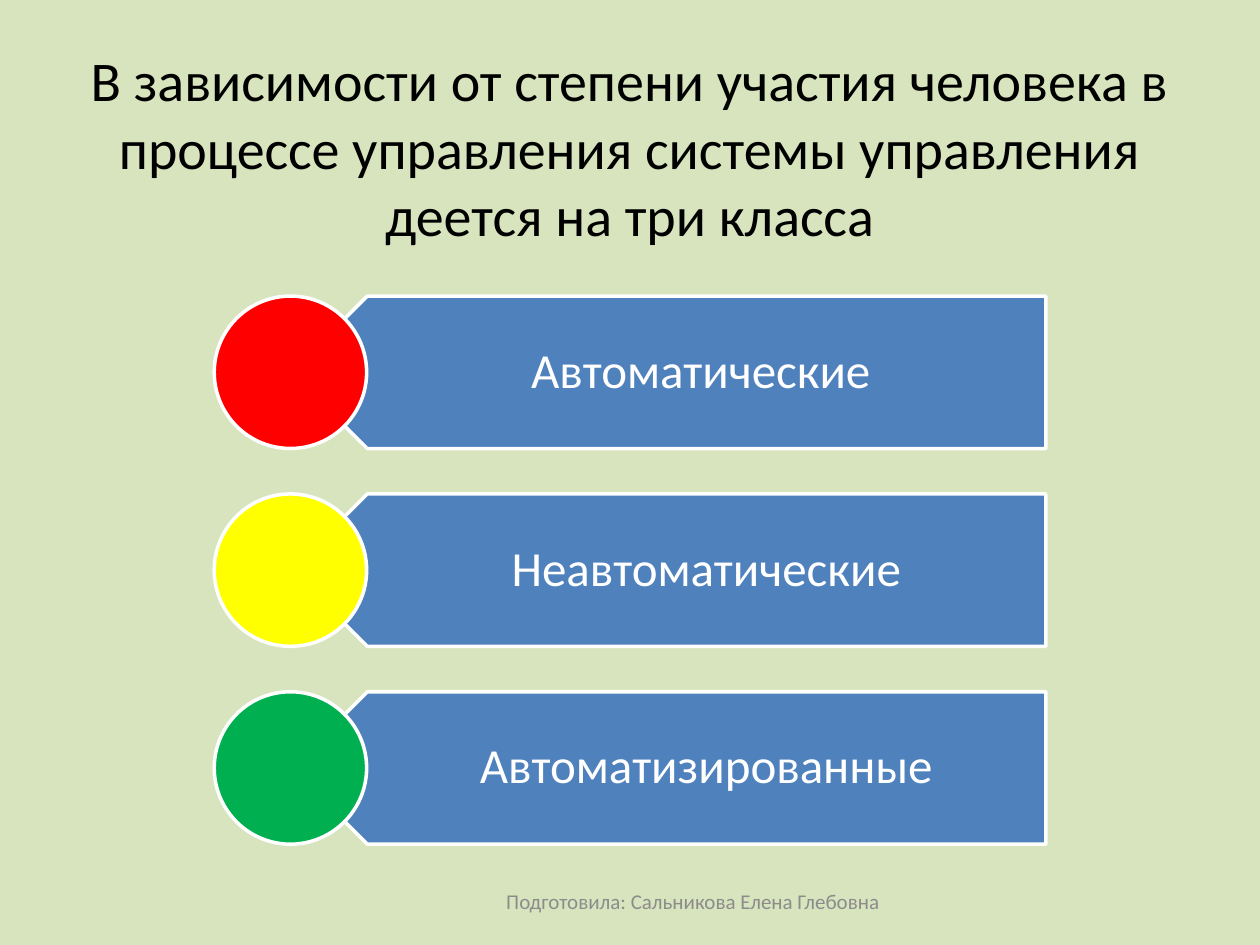
from dataclasses import dataclass

from pptx import Presentation
from pptx.dml.color import RGBColor
from pptx.enum.shapes import MSO_SHAPE
from pptx.enum.text import MSO_ANCHOR, PP_ALIGN
from pptx.util import Inches, Pt

PLATE = MSO_SHAPE.PENTAGON
OVAL = MSO_SHAPE.OVAL
MIDDLE = MSO_ANCHOR.MIDDLE
CENTER = PP_ALIGN.CENTER


@dataclass(frozen=True)
class Theme:
    font: str = "Calibri"
    back: str = "D7E4BD"
    ink: str = "000000"
    white: str = "FFFFFF"
    bar: str = "4F81BD"
    grey: str = "8C8C8C"
    title: int = 32
    label: int = 28
    foot: int = 12
    line: int = 2


THEME = Theme()
SYSTEMS = [
    ("Автоматические ", "FF0000"),
    ("Неавтоматические", "FFFF00"),
    ("Автоматизированные", "00B050"),
]
TOP, STEP, SIZE = 2.35, 1.57, 1.21


def write(frame, text, size, color, spacing=None):
    frame.word_wrap = True
    frame.vertical_anchor = MIDDLE
    para = frame.paragraphs[0]
    para.alignment = CENTER
    if spacing:
        para.line_spacing = spacing
    run = para.add_run()
    run.text = text
    run.font.name = THEME.font
    run.font.size = Pt(size)
    run.font.color.rgb = RGBColor.from_string(color)


class Page:
    def __init__(self, slide, theme):
        self.slide = slide
        self.theme = theme
        fill = slide.background.fill
        fill.solid()
        fill.fore_color.rgb = RGBColor.from_string(theme.back)

    def text(self, box, text, size, color, insets=(0.1, 0.05, 0.1, 0.05), **style):
        """Add a text box; insets run left, top, right, bottom."""
        frame = self.slide.shapes.add_textbox(*map(Inches, box)).text_frame
        (frame.margin_left, frame.margin_top,
         frame.margin_right, frame.margin_bottom) = map(Inches, insets)
        write(frame, text, size, color, **style)

    def shape(self, kind, box, color, turn=0):
        shape = self.slide.shapes.add_shape(kind, *map(Inches, box))
        shape.shadow.inherit = False
        shape.rotation = turn
        shape.fill.solid()
        shape.fill.fore_color.rgb = RGBColor.from_string(color)
        shape.line.color.rgb = RGBColor.from_string(self.theme.white)
        shape.line.width = Pt(self.theme.line)

    def system(self, top, name, color):
        """Add one labelled bar with its signal light."""
        self.shape(PLATE, (2.31, top, 5.99, SIZE), self.theme.bar, turn=180)
        self.text((2.61, top, 5.68, SIZE), name, self.theme.label,
                  self.theme.white, insets=(0.53, 0.12, 0.22, 0.12), spacing=0.9)
        self.shape(OVAL, (1.7, top, SIZE, SIZE), color)


def main():
    deck = Presentation()
    deck.slide_width, deck.slide_height = Inches(10), Inches(7.5)
    page = Page(deck.slides.add_slide(deck.slide_layouts[6]), THEME)
    page.text((0.5, 0.3, 9, 1.73),
              "В зависимости от степени участия человека в процессе управления "
              "системы управления деется на три класса",
              THEME.title, THEME.ink)
    for row, (name, color) in enumerate(SYSTEMS):
        page.system(TOP + row * STEP, name, color)
    page.text((3.42, 6.95, 4.16, 0.4), "Подготовила: Сальникова Елена Глебовна",
              THEME.foot, THEME.grey)
    deck.save("out.pptx")


if __name__ == "__main__":
    main()
